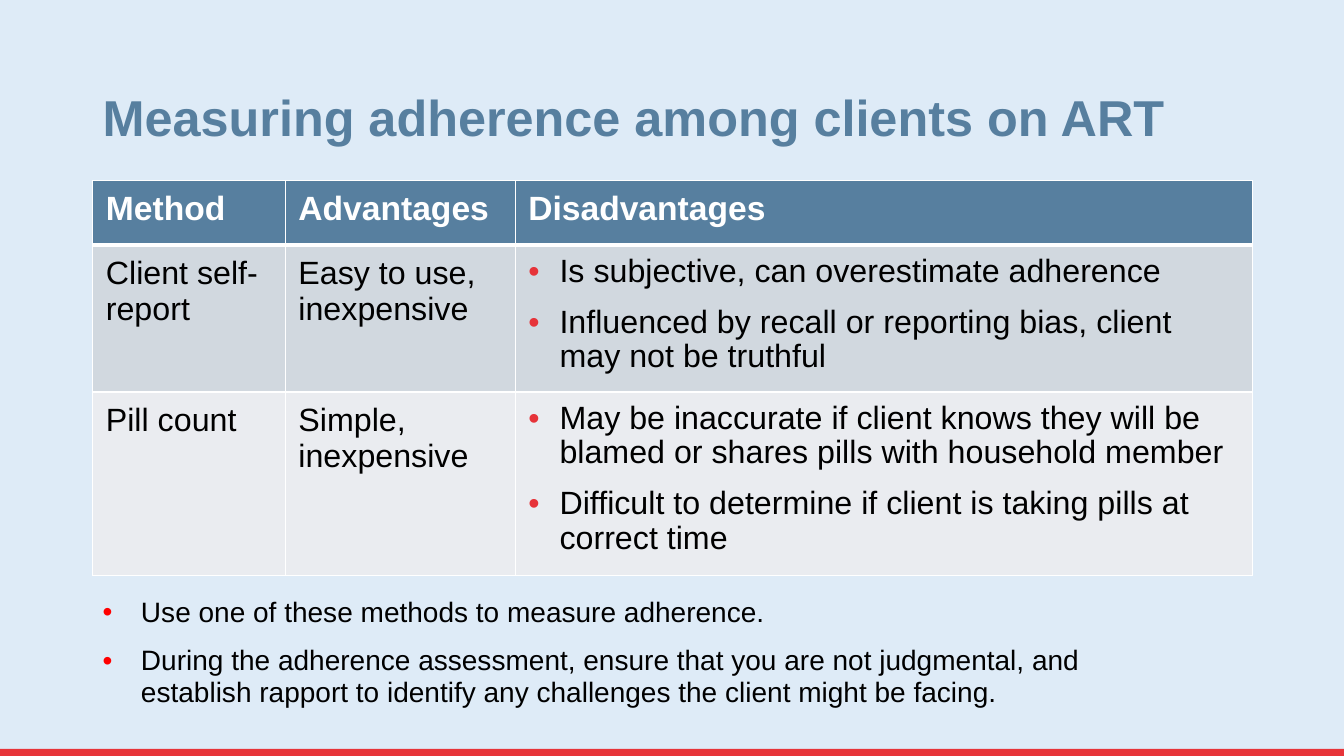
from dataclasses import dataclass

from lxml.etree import SubElement
from pptx import Presentation
from pptx.dml.color import RGBColor
from pptx.enum.shapes import MSO_SHAPE
from pptx.enum.text import MSO_ANCHOR
from pptx.oxml.ns import qn
from pptx.util import Emu, Pt

PX = 9144  # EMU per px, 100 px to the inch
FONT = "Arial"

PALE_BLUE = RGBColor(0xDE, 0xEB, 0xF7)
STEEL = RGBColor(0x57, 0x7F, 0x9F)
BAND_DARK = RGBColor(0xD1, 0xD8, 0xDF)
BAND_LIGHT = RGBColor(0xEA, 0xEC, 0xF0)
FOOTER_RED = RGBColor(0xE7, 0x34, 0x39)
BULLET_RED = RGBColor(0xE6, 0x33, 0x39)
RED = RGBColor(0xFF, 0x00, 0x00)
WHITE = RGBColor(0xFF, 0xFF, 0xFF)
BLACK = RGBColor(0x00, 0x00, 0x00)


@dataclass(frozen=True)
class Style:
    size: int
    color: RGBColor
    bold: bool = False
    line_spacing: float = 1.0
    space_before: int = 0
    indent: int = 0
    bullet: RGBColor | None = None


@dataclass(frozen=True)
class Row:
    height: int
    fill: RGBColor
    styles: tuple[Style, Style, Style]
    cells: tuple[list[str], list[str], list[str]]
    top: int = 1
    bottom: int = 1


TITLE = Style(36, STEEL, bold=True, line_spacing=0.9)
HEAD = Style(24, WHITE, bold=True)
BODY = Style(23, BLACK)
POINTS = Style(23, BLACK, line_spacing=0.95, space_before=12, indent=31, bullet=BULLET_RED)
NOTES = Style(20, BLACK, line_spacing=0.95, space_before=12, indent=38, bullet=RED)

COLUMNS = (191, 228, 731)
ROWS = [
    Row(64, STEEL, (HEAD, HEAD, HEAD),
        (["Method"], ["Advantages"], ["Disadvantages"]), bottom=3),
    Row(138, BAND_DARK, (BODY, BODY, POINTS),
        (["Client self-report"], ["Easy to use, inexpensive"],
         ["Is subjective, can overestimate adherence",
          "Influenced by recall or reporting bias, client may not be truthful"]), top=3),
    Row(177, BAND_LIGHT, (BODY, BODY, POINTS),
        (["Pill count"], ["Simple, inexpensive"],
         ["May be inaccurate if client knows they will be blamed "
          "or shares pills with household member",
          "Difficult to determine if client is taking pills at correct time"])),
]
ADVICE = [
    "Use one of these methods to measure adherence.",
    "During the adherence assessment, ensure that you are not judgmental, "
    "and establish rapport to identify any challenges the client might be facing.",
]


def px(*lengths: int) -> list[Emu]:
    return [Emu(n * PX) for n in lengths]


def add_bullet(p, indent: int, color: RGBColor) -> None:
    pPr = p._p.get_or_add_pPr()
    pPr.set("marL", str(indent * PX))
    pPr.set("indent", str(-indent * PX))
    SubElement(SubElement(pPr, qn("a:buClr")), qn("a:srgbClr"), val=str(color))
    SubElement(pPr, qn("a:buFont"), typeface=FONT)
    SubElement(pPr, qn("a:buChar"), char="•")


def write(tf, texts: list[str], style: Style) -> None:
    for i, text in enumerate(texts):
        p = tf.add_paragraph() if i else tf.paragraphs[0]
        p.line_spacing = style.line_spacing
        if i:
            p.space_before = Pt(style.space_before)
        if style.bullet is not None:
            add_bullet(p, style.indent, style.bullet)
        r = p.add_run()
        r.text = text
        font = {"name": FONT, "size": Pt(style.size), "bold": style.bold}
        for name, value in font.items():
            setattr(r.font, name, value)
        r.font.color.rgb = style.color


def add_text(slide, box: tuple[int, int, int, int], texts: list[str], style: Style,
             anchor: MSO_ANCHOR = MSO_ANCHOR.TOP) -> None:
    tf = slide.shapes.add_textbox(*px(*box)).text_frame
    tf.word_wrap = True
    tf.vertical_anchor = anchor
    write(tf, texts, style)


def set_borders(cell, top: int, bottom: int) -> None:
    """Draw white cell borders; call before the fill, which must follow them in the XML."""
    tcPr = cell._tc.get_or_add_tcPr()
    for side, width in {"L": 1, "R": 1, "T": top, "B": bottom}.items():
        ln = SubElement(tcPr, qn(f"a:ln{side}"), w=str(Pt(width)))
        SubElement(SubElement(ln, qn("a:solidFill")), qn("a:srgbClr"), val=str(WHITE))


def add_methods_table(slide, left: int, top: int) -> None:
    size = px(left, top, sum(COLUMNS), sum(row.height for row in ROWS))
    table = slide.shapes.add_table(len(ROWS), len(COLUMNS), *size).table
    for column, width in zip(table.columns, px(*COLUMNS)):
        column.width = width
    margins = dict(zip(("margin_left", "margin_right", "margin_top", "margin_bottom"),
                       px(13, 13, 10, 10)))
    for table_row, row in zip(table.rows, ROWS):
        table_row.height = px(row.height)[0]
        for cell, texts, style in zip(table_row.cells, row.cells, row.styles):
            for name, value in margins.items():
                setattr(cell, name, value)
            set_borders(cell, row.top, row.bottom)
            cell.fill.solid()
            cell.fill.fore_color.rgb = row.fill
            write(cell.text_frame, texts, style)


def add_footer_bar(slide) -> None:
    sp = slide.shapes.add_shape(MSO_SHAPE.RECTANGLE, *px(0, 743, 1333, 8))
    sp.shadow.inherit = False
    sp.fill.solid()
    sp.fill.fore_color.rgb = FOOTER_RED
    sp.line.fill.background()


def main() -> None:
    prs = Presentation()
    prs.slide_width, prs.slide_height = px(1333, 750)
    slide = prs.slides.add_slide(prs.slide_layouts[6])
    slide.background.fill.solid()
    slide.background.fill.fore_color.rgb = PALE_BLUE
    add_footer_bar(slide)
    add_text(slide, (92, 64, 1150, 87), ["Measuring adherence among clients on ART"],
             TITLE, MSO_ANCHOR.BOTTOM)
    add_methods_table(slide, 92, 179)
    add_text(slide, (92, 587, 1038, 123), ADVICE, NOTES)
    prs.save("out.pptx")


if __name__ == "__main__":
    main()
